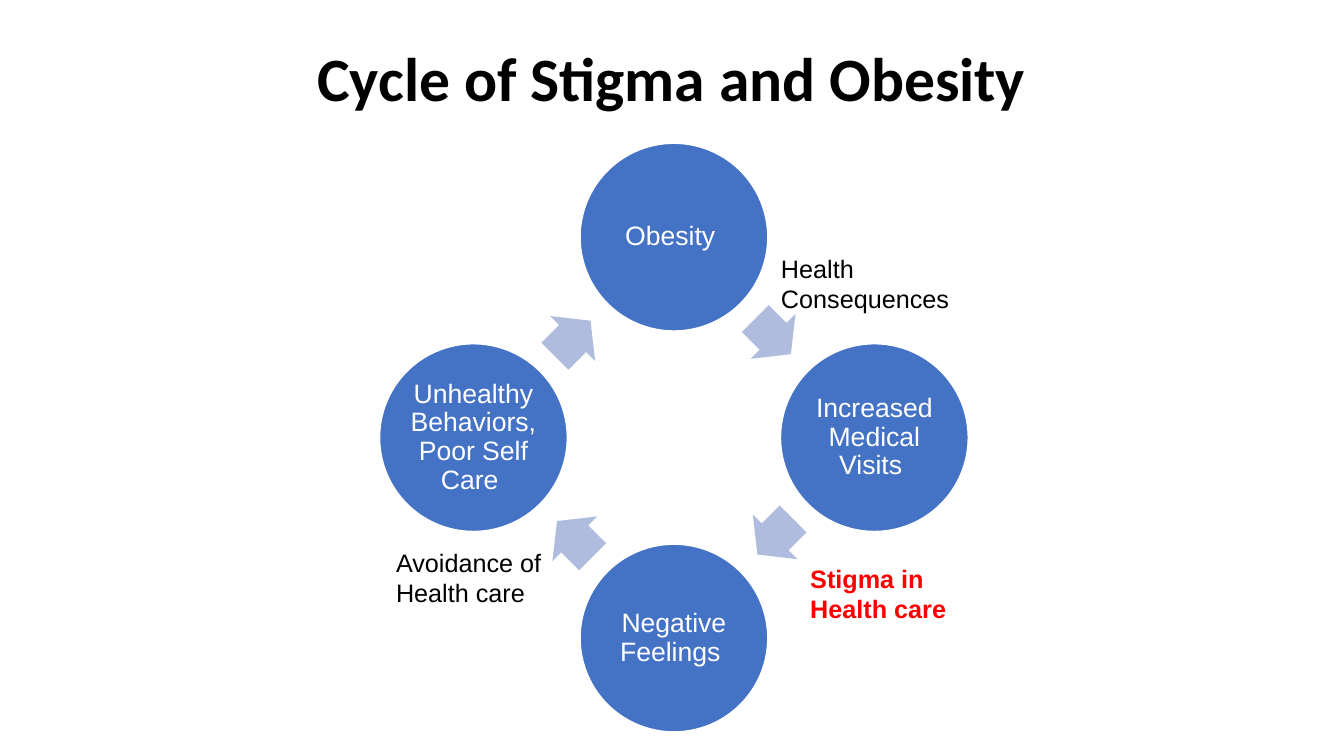
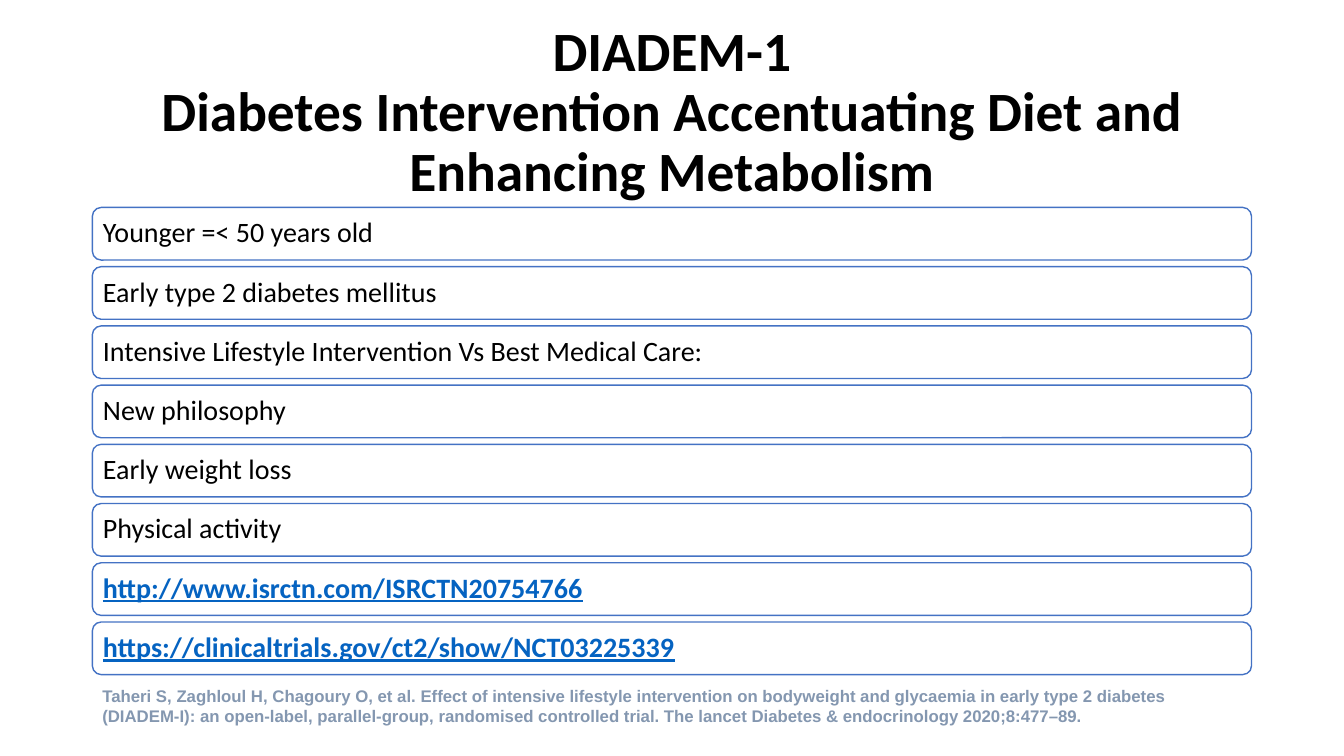
from math import cos, radians, sin

from pptx import Presentation
from pptx.dml.color import RGBColor as Rgb
from pptx.enum.shapes import MSO_SHAPE as Kind
from pptx.enum.text import MSO_ANCHOR as Anchor, PP_ALIGN as Align
from pptx.util import Pt

HUES = {"black": "000000", "white": "FFFFFF", "blue": "4472C4", "pale": "B0BCDE",
        "red": "FF0000", "link": "0563C1", "grey": "8497B0"}


class Deck:
    """Hold the shared style and the current slide, and draw each kind of element."""

    def __init__(self):
        self.prs = Presentation()
        self.prs.slide_width, self.prs.slide_height = Pt(960), Pt(540)
        self.slide = None

    def hue(self, name):
        return Rgb.from_string(HUES[name])

    def page(self, title, top, size):
        self.slide = self.prs.slides.add_slide(self.prs.slide_layouts[6])
        self.label(title, 66, top, 828, 104.4, size, font="Calibri", bold=True,
                   align=Align.CENTER, anchor=Anchor.MIDDLE, lead=0.9)

    def letter(self, shape, text, size, font="Arial", color="black", bold=False, under=None,
               align=Align.LEFT, anchor=Anchor.TOP, lead=None, inset=None):
        frame = shape.text_frame
        frame.word_wrap = True
        frame.vertical_anchor = anchor
        if inset is not None:
            frame.margin_left = frame.margin_right = Pt(inset)
            frame.margin_top = frame.margin_bottom = Pt(inset)
        frame.text = text
        para = frame.paragraphs[0]
        para.alignment = align
        para.line_spacing = lead
        face = para.font
        face.name, face.size, face.bold, face.underline = font, Pt(size), bold, under
        face.color.rgb = self.hue(color)

    def label(self, text, left, top, width, height, size, **style):
        box = self.slide.shapes.add_textbox(Pt(left), Pt(top), Pt(width), Pt(height))
        self.letter(box, text, size, **style)

    def shape(self, kind, left, top, width, height, fill, line=None, weight=1):
        item = self.slide.shapes.add_shape(kind, Pt(left), Pt(top), Pt(width), Pt(height))
        item.shadow.inherit = False
        item.fill.solid()
        item.fill.fore_color.rgb = self.hue(fill)
        if line:
            item.line.color.rgb = self.hue(line)
            item.line.width = Pt(weight)
        else:
            item.line.fill.background()
        return item

    def disc(self, text, x, y, size):
        item = self.shape(Kind.OVAL, x - size / 2, y - size / 2, size, size,
                          "blue", "white", 1.5)
        self.letter(item, text, 19, color="white", align=Align.CENTER,
                    anchor=Anchor.MIDDLE, lead=0.9, inset=2.16)

    def arrow(self, x, y, turn):
        wide, high = 36, 45.4
        item = self.shape(Kind.RIGHT_ARROW, x - wide / 2, y - high / 2, wide, high, "pale")
        item.adjustments[0], item.adjustments[1] = 0.6, 0.5
        item.rotation = turn

    def row(self, text, top, **style):
        item = self.shape(Kind.ROUNDED_RECTANGLE, 66, top, 828, 37.6, "white", "blue")
        self.letter(item, text, 20, font="Calibri", anchor=Anchor.MIDDLE,
                    lead=0.9, inset=5.76, **style)


def orbit(radius, angle):
    turn = radians(angle)
    return 481.4 + radius * cos(turn), 312.6 + radius * sin(turn)


def cycle(deck):
    deck.page("Cycle of Stigma and Obesity", 5.8, 44)
    steps = ["Obesity ", "Increased Medical Visits ", "Negative Feelings ",
             "Unhealthy Behaviors, Poor Self Care "]
    for i, step in enumerate(steps):
        turn = 45 + 90 * i
        deck.disc(step, *orbit(143.2, turn - 135), 134.6)
        deck.arrow(*orbit(101.2, turn - 90.6), turn)
    deck.label("Health Consequences", 550.8, 177.1, 139.7, 51, 18)
    deck.label("Avoidance of Health care", 275.8, 387.4, 125.3, 51, 18)
    deck.label("Stigma in Health care", 571.7, 398.9, 125.3, 51, 18, color="red", bold=True)


def trial(deck):
    deck.page("DIADEM-1\vDiabetes Intervention Accentuating Diet and Enhancing Metabolism",
              28.8, 39.6)
    rows = ["Younger =< 50 years old", "Early type 2 diabetes mellitus",
            "Intensive Lifestyle Intervention Vs Best Medical Care:", "New philosophy",
            "Early weight loss", "Physical activity",
            "http://www.isrctn.com/ISRCTN20754766",
            "https://clinicaltrials.gov/ct2/show/NCT03225339"]
    link = {"color": "link", "bold": True, "under": True}
    for i, text in enumerate(rows):
        deck.row(text, 148.2 + 42.3 * i, **(link if text.startswith("http") else {}))
    deck.label("Taheri S, Zaghloul H, Chagoury O, et al. Effect of intensive lifestyle "
               "intervention on bodyweight and glycaemia in early type 2 diabetes "
               "(DIADEM-I): an open-label, parallel-group, randomised controlled trial. "
               "The lancet Diabetes & endocrinology 2020;8:477–89.",
               66, 486, 828, 36, 12, color="grey", bold=True)


def main():
    deck = Deck()
    cycle(deck)
    trial(deck)
    deck.prs.save("out.pptx")


if __name__ == "__main__":
    main()
